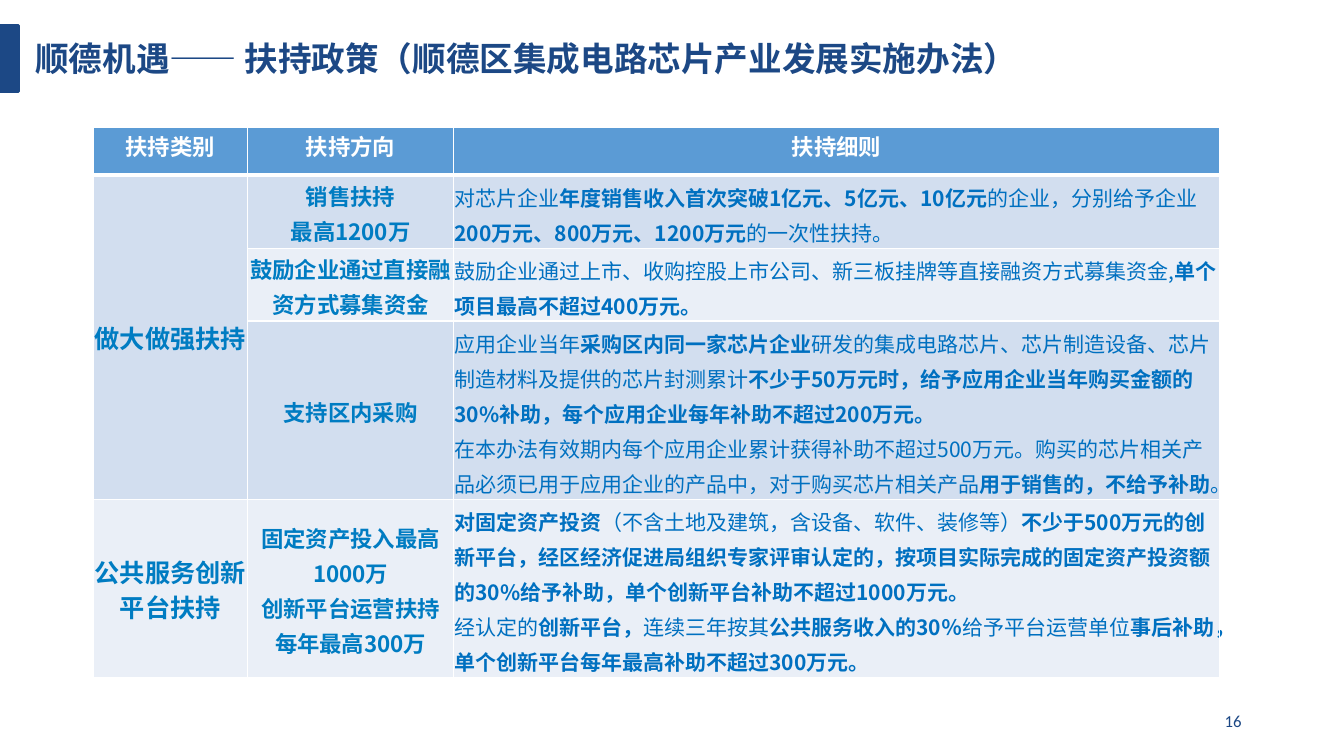
"""Build the slide on Shunde's support policy for the chip industry."""
from dataclasses import dataclass

import lxml.etree
import pptx
import pptx.dml.color
import pptx.enum.shapes
import pptx.enum.text
import pptx.oxml.ns
import pptx.util

Pt = pptx.util.Pt
Align = pptx.enum.text.PP_ALIGN
Anchor = pptx.enum.text.MSO_ANCHOR
qn = pptx.oxml.ns.qn

CJK = "Noto Sans CJK SC"
NAVY = "1C4885"
WHITE = "FFFFFF"
HEADER_FILL = "5B9BD5"
BAND_FILLS = ("EAEFF7", "D2DEEF")
COLUMN_WIDTHS = (110.6, 147, 547.2)
ROW_HEIGHTS = (34.4, 52.4, 51.8, 127.6, 127.4)


@dataclass(frozen=True)
class CellStyle:
    size: float
    color: str
    align: Align
    spacing: float = 25


HEADER = CellStyle(16, WHITE, Align.CENTER, 15)
CATEGORY = CellStyle(18, "007CC2", Align.CENTER)
DIRECTION = CellStyle(16, "007CC2", Align.CENTER)
DETAIL = CellStyle(15, "0070C0", Align.LEFT)


@dataclass(frozen=True)
class Policy:
    """One table row; asterisks in the details enclose bold text."""

    category: str
    directions: tuple[str, ...]
    details: tuple[str, ...]


HEADINGS = ("扶持类别", "扶持方向", "扶持细则")
POLICIES = (
    Policy(
        "做大做强扶持",
        ("销售扶持", "最高1200万"),
        ("对芯片企业*年度销售收入首次突破1亿元、5亿元、10亿元*的企业，分别给予企业"
         "*200万元、800万元、1200万元*的一次性扶持。",),
    ),
    Policy(
        "",
        ("鼓励企业通过直接融资方式募集资金",),
        ("鼓励企业通过上市、收购控股上市公司、新三板挂牌等直接融资方式募集资金,"
         "*单个项目最高不超过400万元。*",),
    ),
    Policy(
        "",
        ("支持区内采购",),
        ("应用企业当年*采购区内同一家芯片企业*研发的集成电路芯片、芯片制造设备、"
         "芯片制造材料及提供的芯片封测累计*不少于50万元时，给予应用企业当年购买金额的"
         "30%补助，每个应用企业每年补助不超过200万元。*",
         "在本办法有效期内每个应用企业累计获得补助不超过500万元。购买的芯片相关产品"
         "必须已用于应用企业的产品中，对于购买芯片相关产品*用于销售的，不给予补助*。"),
    ),
    Policy(
        "公共服务创新平台扶持",
        ("固定资产投入最高1000万", "创新平台运营扶持", "每年最高300万"),
        ("*对固定资产投资*（不含土地及建筑，含设备、软件、装修等）*不少于500万元的"
         "创新平台，经区经济促进局组织专家评审认定的，按项目实际完成的固定资产投资额的"
         "30%给予补助，单个创新平台补助不超过1000万元。*",
         "经认定的*创新平台，*连续三年按其*公共服务收入的30％*给予平台运营单位"
         "*事后补助，单个创新平台每年最高补助不超过300万元。*"),
    ),
)


def rgb(value: str) -> pptx.dml.color.RGBColor:
    return pptx.dml.color.RGBColor.from_string(value)


def format_span(span, size: float, color: str, bold: bool, face: str = CJK) -> None:
    span.font.size = Pt(size)
    span.font.bold = bold
    span.font.name = face
    span.font.color.rgb = rgb(color)
    if face != "Calibri":
        east_asian = lxml.etree.SubElement(span.font._element, qn("a:ea"))
        east_asian.set("typeface", CJK)


def set_borders(cell, top: float, bottom: float) -> None:
    properties = cell._tc.get_or_add_tcPr()
    widths = {"lnL": 1, "lnR": 1, "lnT": top, "lnB": bottom}
    for position, (tag, width) in enumerate(widths.items()):
        line = lxml.etree.Element(qn(f"a:{tag}"), w=str(Pt(width)))
        fill = lxml.etree.SubElement(line, qn("a:solidFill"))
        lxml.etree.SubElement(fill, qn("a:srgbClr"), val=WHITE)
        properties.insert(position, line)


def fill_cell(cell, lines: tuple[str, ...], style: CellStyle, fill: str) -> None:
    cell.fill.solid()
    cell.fill.fore_color.rgb = rgb(fill)
    cell.vertical_anchor = Anchor.MIDDLE
    cell.margin_left = cell.margin_right = cell.margin_top = Pt(0.72)
    cell.margin_bottom = 0
    cell.text_frame.text = "\n".join(lines)
    for para, line in zip(cell.text_frame.paragraphs, lines):
        para.alignment = style.align
        para.line_spacing = Pt(style.spacing)
        para.text = ""
        for index, part in enumerate(line.split("*")):
            if part:
                span = para.add_run()
                span.text = part
                bold = style is not DETAIL or index % 2 == 1
                format_span(span, style.size, style.color, bold)


def add_title(page) -> None:
    title = page.shapes.title
    title.left, title.top, title.width, title.height = Pt(18), Pt(23), Pt(904), Pt(37)
    frame = title.text_frame
    frame.auto_size = pptx.enum.text.MSO_AUTO_SIZE.NONE
    frame.vertical_anchor = Anchor.MIDDLE
    frame.word_wrap = True
    para = frame.paragraphs[0]
    para.alignment = Align.LEFT
    pieces = (("顺德机遇—— 扶持政策（顺德区", CJK),
              ("集成电路芯片产业发展实施办法", "Arial"), ("）", CJK))
    for text, face in pieces:
        span = para.add_run()
        span.text = text
        format_span(span, 24, NAVY, True, face)


def add_accent(page) -> None:
    accent = page.shapes.add_shape(
        pptx.enum.shapes.MSO_SHAPE.RECTANGLE, 0, Pt(18), Pt(13), Pt(47.5))
    accent.shadow.inherit = False
    accent.fill.solid()
    accent.fill.fore_color.rgb = rgb(NAVY)
    accent.line.color.rgb = rgb(NAVY)
    accent.line.width = Pt(2)


def add_policy_table(page) -> None:
    table = page.shapes.add_table(
        len(ROW_HEIGHTS), len(COLUMN_WIDTHS), Pt(66.4), Pt(90.7),
        Pt(sum(COLUMN_WIDTHS)), Pt(sum(ROW_HEIGHTS))).table
    for column, width in zip(table.columns, COLUMN_WIDTHS):
        column.width = Pt(width)
    for row, height in zip(table.rows, ROW_HEIGHTS):
        row.height = Pt(height)
    for index, heading in enumerate(HEADINGS):
        fill_cell(table.cell(0, index), (heading,), HEADER, HEADER_FILL)
    for row, policy in enumerate(POLICIES, start=1):
        contents = (((policy.category,), CATEGORY), (policy.directions, DIRECTION),
                    (policy.details, DETAIL))
        for column, (lines, style) in enumerate(contents):
            fill_cell(table.cell(row, column), lines, style, BAND_FILLS[row % 2])
    for row in range(len(ROW_HEIGHTS)):
        for column in range(len(COLUMN_WIDTHS)):
            set_borders(table.cell(row, column),
                        3 if row == 1 else 1, 3 if row == 0 else 1)
    table.cell(1, 0).merge(table.cell(3, 0))


def add_page_number(page) -> None:
    box = page.shapes.add_textbox(Pt(678), Pt(500.4), Pt(216), Pt(28.8))
    box.text_frame.word_wrap = True
    box.text_frame.vertical_anchor = Anchor.MIDDLE
    box.text_frame.text = "16"
    para = box.text_frame.paragraphs[0]
    para.alignment = Align.RIGHT
    format_span(para.runs[0], 12, NAVY, False, "Calibri")


def main() -> None:
    deck = pptx.Presentation()
    deck.slide_width, deck.slide_height = Pt(960), Pt(540)
    page = deck.slides.add_slide(deck.slide_layouts.get_by_name("Title Only"))
    add_page_number(page)
    add_title(page)
    add_accent(page)
    add_policy_table(page)
    deck.save("out.pptx")


if __name__ == "__main__":
    main()
